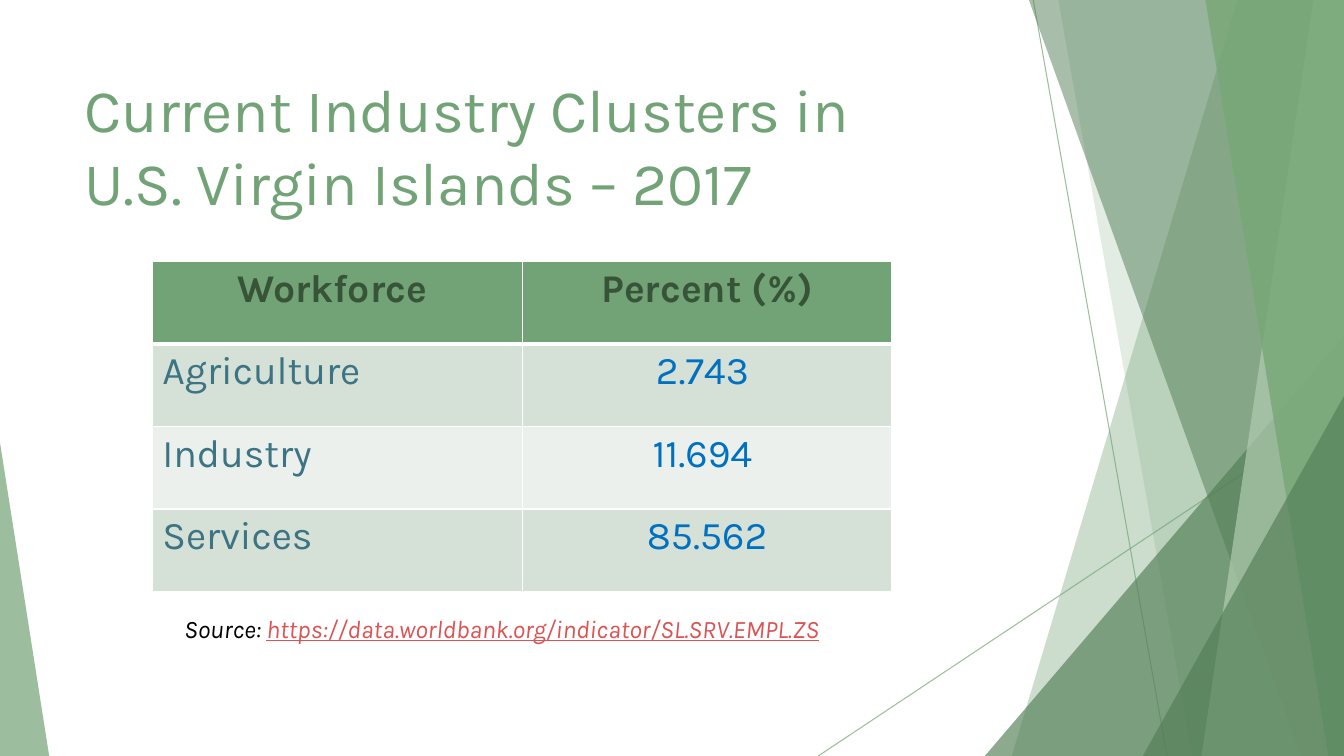
import pptx
import pptx.util
import pptx.dml.color
import pptx.enum.shapes
import pptx.enum.text
import pptx.oxml
import pptx.oxml.ns
from lxml import etree

Cm, Pt = pptx.util.Cm, pptx.util.Pt
ALIGN = pptx.enum.text.PP_ALIGN
SHAPE = pptx.enum.shapes.MSO_SHAPE
qn = pptx.oxml.ns.qn
WIDTH, HEIGHT = 33.87, 19.05


def rgb(value):
    return pptx.dml.color.RGBColor.from_string(value)


def add_text(p, text, size=28, color="000000", **fmt):
    r = p.add_run()
    r.text = text
    r.font.name = "Karla"
    r.font.size = Pt(size)
    r.font.color.rgb = rgb(color)
    for name, value in fmt.items():
        setattr(r.font, name, value)


def set_alpha(fill_parent, percent):
    color = fill_parent.find(".//" + qn("a:srgbClr"))
    etree.SubElement(color, qn("a:alpha")).set("val", str(percent * 1000))


class Deck:
    green, dark, pale, leaf = "72A376", "527E56", "B0CCB0", "76A776"

    def __init__(self):
        self.prs = pptx.Presentation()
        self.prs.slide_width, self.prs.slide_height = Cm(WIDTH), Cm(HEIGHT)
        self.slide = self.prs.slides.add_slide(self.prs.slide_layouts[6])
        self.shapes = self.slide.shapes

    def paint(self, sp, color, alpha):
        sp.shadow.inherit = False
        sp.fill.solid()
        sp.fill.fore_color.rgb = rgb(color)
        sp.line.fill.background()
        set_alpha(sp._element.spPr, alpha)

    def line(self, x1, y1, x2, y2):
        cx = self.shapes.add_connector(pptx.enum.shapes.MSO_CONNECTOR.STRAIGHT,
                                       Cm(x1), Cm(y1), Cm(x2), Cm(y2))
        cx.line.color.rgb = rgb(self.green)
        cx.line.width = Pt(0.75)
        set_alpha(cx._element.spPr, 70)
        etree.SubElement(cx._element.spPr, qn("a:effectLst"))

    def facet(self, top, bottom, color, alpha):
        """Panel from a slanted left edge to the right side of the slide."""
        fb = self.shapes.build_freeform(Cm(top), 0)
        fb.add_line_segments([(Cm(WIDTH), 0), (Cm(WIDTH), Cm(HEIGHT)),
                              (Cm(bottom), Cm(HEIGHT))], close=True)
        self.paint(fb.convert_to_shape(), color, alpha)

    def triangle(self, x, y, w, apex, color, alpha):
        """Triangle standing on the bottom edge of the slide."""
        sp = self.shapes.add_shape(SHAPE.ISOSCELES_TRIANGLE,
                                   Cm(x), Cm(y), Cm(w), Cm(HEIGHT - y))
        sp.adjustments[0] = apex
        self.paint(sp, color, alpha)

    def textbox(self, x, y, w, h):
        tf = self.shapes.add_textbox(Cm(x), Cm(y), Cm(w), Cm(h)).text_frame
        tf.word_wrap = True
        return tf.paragraphs[0]

    def border(self, cell, side, width):
        ln = etree.Element(qn("a:" + side), w=str(Pt(width)))
        fill = etree.SubElement(ln, qn("a:solidFill"))
        etree.SubElement(fill, qn("a:srgbClr"), val="FFFFFF")
        return ln

    def table(self, x, y, w, h, rows):
        tbl = self.shapes.add_table(len(rows), len(rows[0]),
                                    Cm(x), Cm(y), Cm(w), Cm(h)).table
        for i, row in enumerate(rows):
            for j, text in enumerate(row):
                cell = tbl.cell(i, j)
                header = i == 0
                cell.fill.solid()
                cell.fill.fore_color.rgb = rgb(
                    self.green if header else ("EBF0EC", "D5E0D6")[i % 2])
                widths = {"lnL": 1, "lnR": 1, "lnT": 3 if i == 1 else 1,
                          "lnB": 3 if header else 1}
                for k, (side, width) in enumerate(widths.items()):
                    cell._tc.tcPr.insert(k, self.border(cell, side, width))
                p = cell.text_frame.paragraphs[0]
                p.alignment = ALIGN.CENTER if header or j else ALIGN.LEFT
                color = "375439" if header else ("3C7483", "0070C0")[j]
                add_text(p, text, color=color, bold=header)


def main():
    d = Deck()

    # Slanted decoration
    d.line(26.04, 0, 29.41, HEIGHT)
    d.line(WIDTH, 10.24, 20.62, HEIGHT)
    d.facet(31.19, 25.5, d.green, 36)
    d.facet(26.67, 30.05, d.green, 20)
    d.triangle(24.82, 8.46, 9.05, 1, d.dark, 66)
    d.facet(25.93, 32.79, d.dark, 50)
    d.facet(33.1, 30.28, d.pale, 70)
    d.facet(30.38, 33.48, d.leaf, 80)
    d.triangle(28.8, 9.98, 5.07, 1, d.dark, 66)
    d.triangle(0, 11.15, 1.24, 0, d.green, 70)

    # Title
    p = d.textbox(1.88, 1.7, 23.88, 3.66)
    add_text(p, "Current Industry Clusters in", 43.2, d.green)
    p.add_line_break()
    add_text(p, "U.S. Virgin Islands – 2017", 43.2, d.green)

    # Source line
    p = d.textbox(4.39, 15.34, 22, 1.02)
    add_text(p, "Source: ", 18, italic=True)
    add_text(p, "https://data.worldbank.org/indicator/SL.SRV.EMPL.ZS", 18,
             "DB5353", italic=True, underline=True)

    # Workforce table
    d.table(3.84, 6.58, 18.64, 8.33, [
        ("Workforce ", "Percent (%)"),
        ("Agriculture", "2.743 "),
        ("Industry", "11.694 "),
        ("Services", "85.562"),
    ])

    d.prs.save("out.pptx")


if __name__ == "__main__":
    main()
